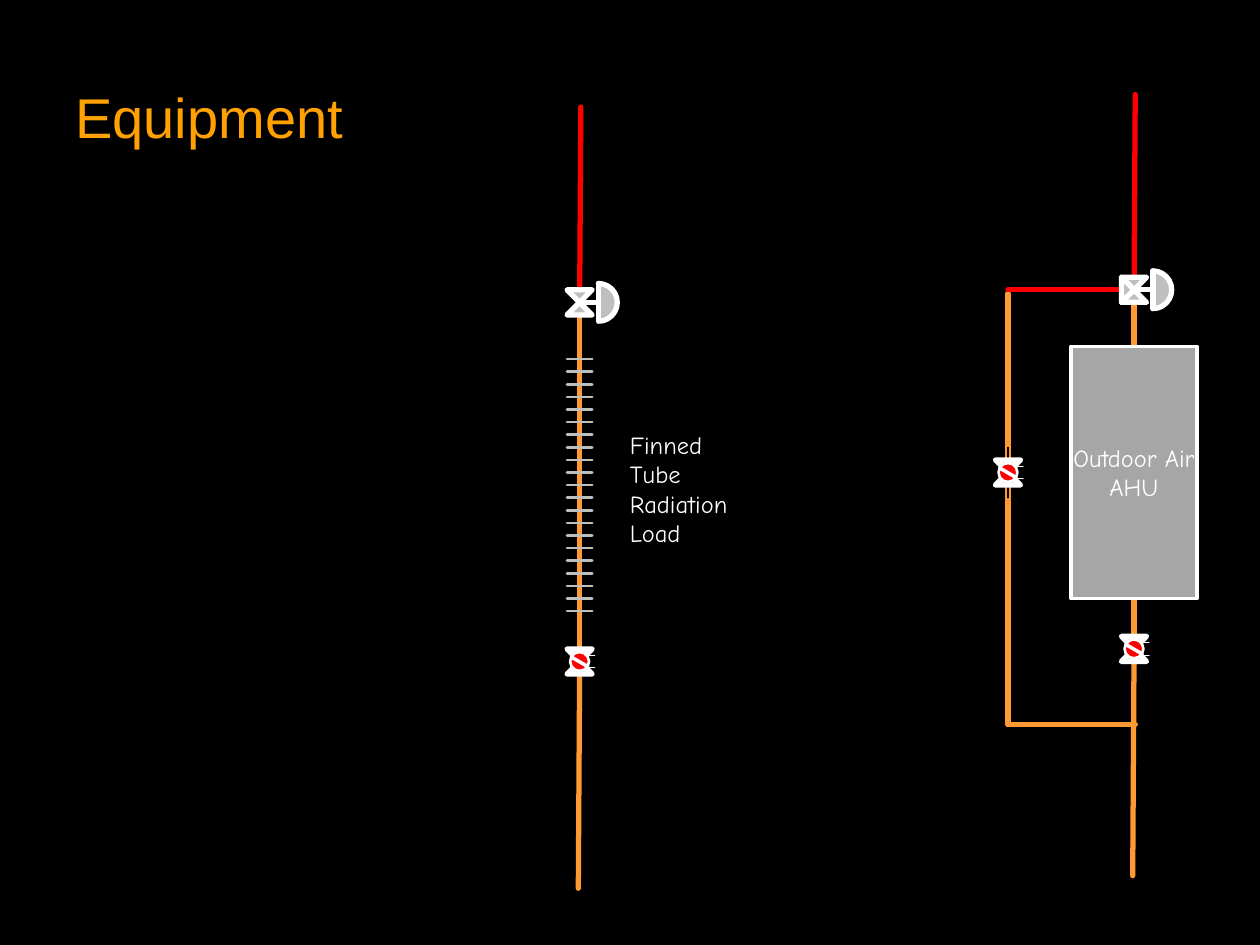
from lxml.etree import SubElement
from pptx import Presentation
from pptx.dml.color import RGBColor
from pptx.enum.shapes import MSO_CONNECTOR, MSO_SHAPE as Preset
from pptx.enum.text import MSO_ANCHOR, PP_ALIGN
from pptx.oxml.ns import qn
from pptx.util import Inches, Pt

BLACK = RGBColor(0x00, 0x00, 0x00)
WHITE = RGBColor(0xFF, 0xFF, 0xFF)
SUPPLY_RED = RGBColor(0xFF, 0x00, 0x00)
RETURN_ORANGE = RGBColor(0xFF, 0x99, 0x33)
TITLE_ORANGE = RGBColor(0xFF, 0xA1, 0x00)
FIN_GRAY = RGBColor(0xBF, 0xBF, 0xBF)
UNIT_GRAY = RGBColor(0xA6, 0xA6, 0xA6)

deck = Presentation()
deck.slide_width, deck.slide_height = Inches(10), Inches(7.5)
slide = deck.slides.add_slide(deck.slide_layouts[6])
slide.background.fill.solid()
slide.background.fill.fore_color.rgb = BLACK
COL = deck.slide_width / 100
ROW = deck.slide_height / 75


def draw_line(x1, y1, x2, y2, color, width):
    stroke = slide.shapes.add_connector(
        MSO_CONNECTOR.STRAIGHT,
        round(x1 * COL), round(y1 * ROW), round(x2 * COL), round(y2 * ROW))
    stroke.line.color.rgb = color
    stroke.line.width = Pt(width)
    stroke.get_or_add_ln().set("cap", "rnd")
    SubElement(stroke.element.spPr, qn("a:effectLst"))


def draw_part(preset, x, y, w, h, fill, width, turn=0):
    part = slide.shapes.add_shape(
        preset, round(x * COL), round(y * ROW), round(w * COL), round(h * ROW))
    part.shadow.inherit = False
    part.fill.solid()
    part.fill.fore_color.rgb = fill
    part.line.color.rgb = WHITE
    part.line.width = Pt(width)
    part.get_or_add_ln().set("cap", "rnd")
    SubElement(part.get_or_add_ln(), qn("a:round"))
    part.rotation = turn
    return part


pipes = [
    (45.9, 70.5, 46, 53.5, RETURN_ORANGE),
    (46, 24.5, 46.1, 8.5, SUPPLY_RED),
    (46, 25, 46, 53.5, RETURN_ORANGE),
    (80, 23.3, 80, 57.5, RETURN_ORANGE),
    (80, 23, 90.1, 23, SUPPLY_RED),
    (80, 57.5, 90.1, 57.5, RETURN_ORANGE),
    (89.9, 69.5, 90, 52.5, RETURN_ORANGE),
    (90, 23.5, 90.1, 7.5, SUPPLY_RED),
    (90, 24, 90, 52.5, RETURN_ORANGE),
]
for x1, y1, x2, y2, color in pipes:
    draw_line(x1, y1, x2, y2, color, 3)
draw_line(80, 35.5, 80, 39.5, BLACK, 0.75)

for x, y in [(46, 52.5), (90, 51.5), (80, 37.5)]:
    draw_line(x + 3, y, x - 3, y, BLACK, 0.75)
    for tap in (-0.5, 0.5):
        draw_line(x + 0.2, y + tap, x + 1.2, y + tap, WHITE, 0.75)
    draw_part(Preset.ISOSCELES_TRIANGLE, x - 1, y - 1, 2, 1, FIN_GRAY, 3, 180)
    draw_part(Preset.ISOSCELES_TRIANGLE, x - 1, y, 2, 1, FIN_GRAY, 3)
    draw_part(Preset.OVAL, x - 0.75, y - 0.75, 1.5, 1.5, SUPPLY_RED, 1.5, 30)
    draw_line(x - 0.65, y - 0.35, x + 0.65, y + 0.4, WHITE, 2)

for fin in range(21):
    draw_line(45, 28.5 + fin, 47, 28.5 + fin, FIN_GRAY, 1.5)

air_handler = draw_part(Preset.RECTANGLE, 85, 27.5, 10, 20, UNIT_GRAY, 2)

for x, y in [(46, 24), (90, 23)]:
    draw_part(Preset.ISOSCELES_TRIANGLE, x - 1, y - 1, 2, 1, FIN_GRAY, 3, 180)
    draw_part(Preset.ISOSCELES_TRIANGLE, x - 1, y, 2, 1, FIN_GRAY, 3)
    draw_line(x, y, x + 1.5, y, WHITE, 3)
    actuator = draw_part(Preset.ARC, x, y - 1.5, 3, 3, FIN_GRAY, 3)
    actuator.adjustments[0] = 162
    actuator.adjustments[1] = 49.61
    draw_line(x + 1.5, y - 1.5, x + 1.5, y + 1.5, WHITE, 3)
draw_part(Preset.ISOSCELES_TRIANGLE, 88.5, 22.5, 2, 1, FIN_GRAY, 3, 90)

heading = slide.shapes.add_textbox(
    round(5 * COL), round(3 * ROW), round(90 * COL), round(12.5 * ROW))
radiation_label = slide.shapes.add_textbox(
    round(50 * COL), round(34.1 * ROW), round(10 * COL), round(9.4 * ROW))

captions = [
    (heading, "Equipment", "Arial", 32, TITLE_ORANGE, PP_ALIGN.LEFT, 0.1),
    (radiation_label, "Finned Tube Radiation Load", "Comic Neue", 14, WHITE, PP_ALIGN.LEFT, 0),
    (air_handler, "Outdoor Air AHU", "Comic Neue", 14, WHITE, PP_ALIGN.CENTER, 0),
]
for holder, words, font, size, color, align, inset in captions:
    frame = holder.text_frame
    frame.word_wrap = True
    frame.vertical_anchor = MSO_ANCHOR.MIDDLE
    frame.margin_left = frame.margin_right = Inches(inset)
    frame.margin_top = frame.margin_bottom = Inches(inset / 2)
    frame.paragraphs[0].alignment = align
    run = frame.paragraphs[0].add_run()
    run.text = words
    run.font.name = font
    run.font.size = Pt(size)
    run.font.color.rgb = color

deck.save("out.pptx")
